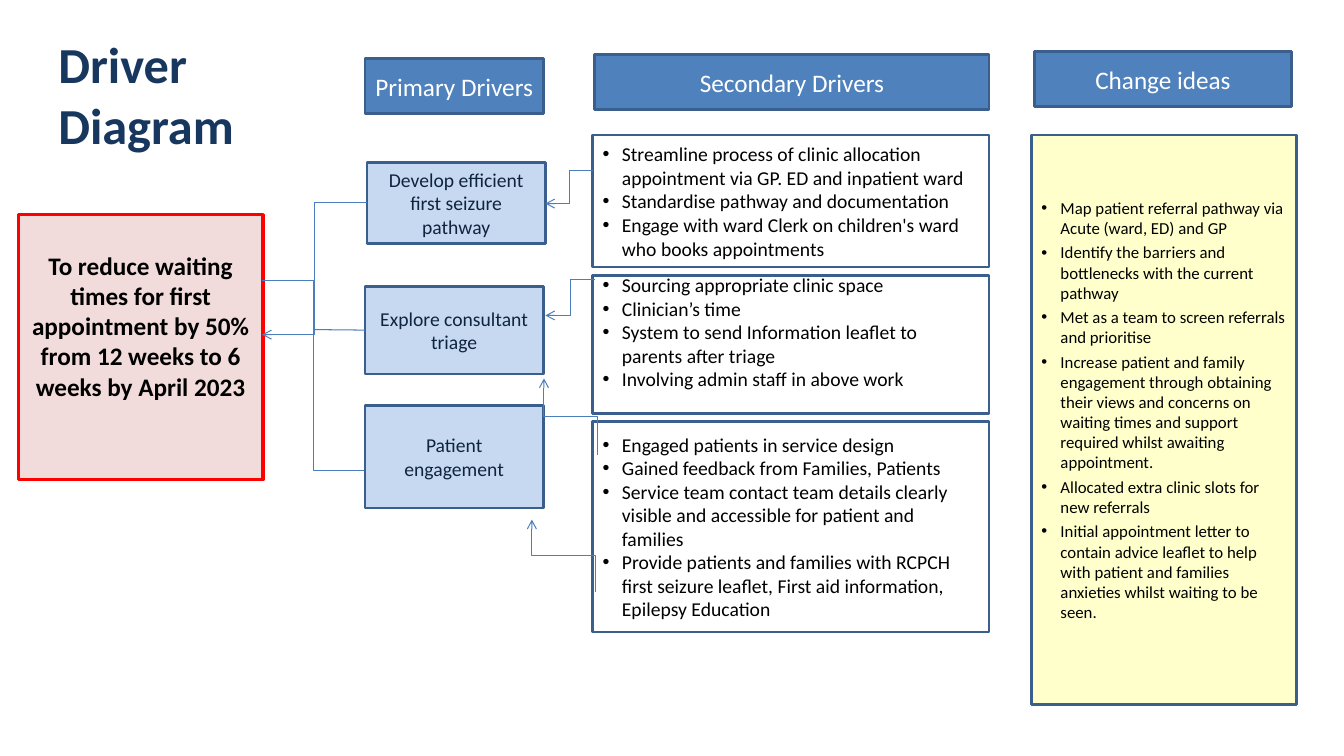
from lxml import etree
from pptx import Presentation
from pptx.dml.color import RGBColor
from pptx.enum import shapes, text
from pptx.oxml import ns
from pptx.util import Inches, Pt

BLUE = RGBColor(0x4F, 0x81, 0xBD)
EDGE = RGBColor(0x3A, 0x5F, 0x8C)
LINK = RGBColor(0x4B, 0x7E, 0xBC)
PALE = RGBColor(0xC6, 0xD9, 0xF1)
NAVY = RGBColor(0x0F, 0x24, 0x3E)
TITLE = RGBColor(0x17, 0x37, 0x5E)
PINK = RGBColor(0xF2, 0xDC, 0xDB)
RED = RGBColor(0xFF, 0, 0)
CREAM = RGBColor(0xFF, 0xFF, 0xCC)
WHITE = RGBColor(0xFF, 0xFF, 0xFF)
BLACK = RGBColor(0, 0, 0)

HEADS = [
    ("Primary Drivers", 3.62, 0.58, 1.77),
    ("Secondary Drivers", 5.9, 0.54, 3.91),
    ("Change ideas", 10.26, 0.51, 2.55),
]
GOAL = ("To reduce waiting times for first appointment by 50% "
        "from 12 weeks to 6 weeks by April 2023")
# text, left, top, height
PRIMARY = [
    ("Patient engagement", 3.62, 4.02, 1.02),
    ("Develop efficient first seizure pathway", 3.64, 1.61, 0.81),
    ("Explore consultant triage", 3.62, 2.84, 0.87),
]
# top, height, bottom inset, points
SECOND = [
    (1.34, 1.31, 0.05, [
        "Streamline process of clinic allocation appointment via GP. ED and inpatient ward",
        "Standardise pathway and documentation",
        "Engage with ward Clerk on children's ward who books appointments",
    ]),
    (2.73, 1.37, 0.29, [
        "Sourcing appropriate clinic space",
        "Clinician’s time",
        "System to send Information leaflet to parents after triage",
        "Involving admin staff in above work",
    ]),
    (4.18, 2.09, 0.05, [
        "Engaged patients in service design",
        "Gained feedback from Families, Patients",
        "Service team contact team details clearly visible and accessible "
        "for patient and families",
        "Provide patients and families with RCPCH first seizure leaflet, "
        "First aid information, Epilepsy Education",
    ]),
]
IDEAS = [
    "Map patient referral pathway via Acute (ward, ED) and GP",
    "Identify the barriers and bottlenecks with the current pathway",
    "Met as a team to screen referrals and prioritise",
    "Increase patient and family engagement through obtaining their views and "
    "concerns on waiting times and support required whilst awaiting appointment.",
    "Allocated extra clinic slots for new referrals",
    "Initial appointment letter to contain advice leaflet to help with patient "
    "and families anxieties whilst waiting to be seen.",
]
# start x, y, end x, y, before any turn
ARROWS = [
    (3.64, 2.01, 2.6, 3.32),
    (5.88, 1.69, 5.41, 2.02),
    (5.9, 2.77, 5.41, 3.13),
]
RISING = [
    (5.23, 5.83, 5.95, 5.2),
    (5.28, 4.4, 6.04, 3.87),
]


def style(para, size, color, bold=False):
    font = para.font
    font.name, font.size, font.bold = "Calibri", Pt(size), bold
    font.color.rgb = color


def add_box(slide, area, fill, line=EDGE, width=2):
    box = slide.shapes.add_shape(shapes.MSO_SHAPE.RECTANGLE, *map(Inches, area))
    box.shadow.inherit = False
    if fill is None:
        box.fill.background()
    else:
        box.fill.solid()
        box.fill.fore_color.rgb = fill
    box.line.color.rgb = line
    box.line.width = Pt(width)
    box.text_frame.word_wrap = True
    box.text_frame.vertical_anchor = text.MSO_ANCHOR.MIDDLE
    return box


def add_label(slide, words, area, fill, size, color, bold=False, **edge):
    box = add_box(slide, area, fill, **edge)
    para = box.text_frame.paragraphs[0]
    para.text = words
    para.alignment = text.PP_ALIGN.CENTER
    style(para, size, color, bold)
    return box


def add_list(slide, points, area, fill, size, bottom, gap=0):
    """Add a box of bulleted points with a given bottom inset."""
    frame = add_box(slide, area, fill).text_frame
    frame.margin_bottom = Inches(bottom)
    for i, point in enumerate(points):
        para = frame.add_paragraph() if i else frame.paragraphs[0]
        para.text = point
        para.alignment = text.PP_ALIGN.LEFT
        if i and gap:
            para.space_before = Pt(gap)
        props = para._p.get_or_add_pPr()
        props.set("marL", str(Inches(0.19)))
        props.set("indent", str(-Inches(0.19)))
        etree.SubElement(props, ns.qn("a:buFont"), typeface="Arial")
        etree.SubElement(props, ns.qn("a:buChar"), char="•")
        style(para, size, BLACK)


def add_link(slide, ends, kind=shapes.MSO_CONNECTOR.ELBOW, arrow=True, turn=0):
    """Add a connector, turned clockwise by the given degrees."""
    link = slide.shapes.add_connector(kind, *map(Inches, ends))
    link.line.color.rgb = LINK
    link.line.width = Pt(0.75)
    props = link._element.spPr
    if arrow:
        etree.SubElement(link.line._get_or_add_ln(), ns.qn("a:tailEnd"), type="arrow")
    if turn:
        props.find(ns.qn("a:xfrm")).set("rot", str(turn * 60000))
    etree.SubElement(props, ns.qn("a:effectLst"))
    return link


def add_title(slide, words, area):
    frame = slide.shapes.add_textbox(*map(Inches, area)).text_frame
    frame.word_wrap = True
    frame.text = words
    style(frame.paragraphs[0], 36, TITLE, True)


def main():
    deck = Presentation()
    deck.slide_width, deck.slide_height = Inches(13.33), Inches(7.5)
    slide = deck.slides.add_slide(deck.slide_layouts[6])

    add_title(slide, "Driver Diagram", (0.48, 0.28, 2.06, 1.26))
    goal = add_label(slide, GOAL, (0.18, 2.13, 2.43, 2.63), PINK, 18, BLACK, True,
                     line=RED, width=2.25)
    goal.text_frame.vertical_anchor = text.MSO_ANCHOR.TOP
    goal.text_frame.margin_top = Inches(0.35)

    for words, left, top, width in HEADS:
        add_label(slide, words, (left, top, width, 0.55), BLUE, 18, WHITE)
    drivers = [add_label(slide, words, (left, top, 1.77, height), PALE, 14, NAVY)
               for words, left, top, height in PRIMARY]
    for top, height, bottom, points in SECOND:
        add_list(slide, points, (5.88, top, 3.93, height), None, 14, bottom)
    add_list(slide, IDEAS, (10.23, 1.34, 2.63, 5.65), CREAM, 12, 0.25, gap=3)

    for ends in ARROWS:
        add_link(slide, ends)
    for ends in RISING:
        add_link(slide, ends, turn=270)
    add_link(slide, (2.6, 2.78, 3.61, 4.67), arrow=False)
    stem = add_link(slide, (3.62, 3.27, 3.11, 3.27),
                    shapes.MSO_CONNECTOR.STRAIGHT, arrow=False)
    stem.begin_connect(drivers[-1], 1)

    deck.save("out.pptx")


if __name__ == "__main__":
    main()
